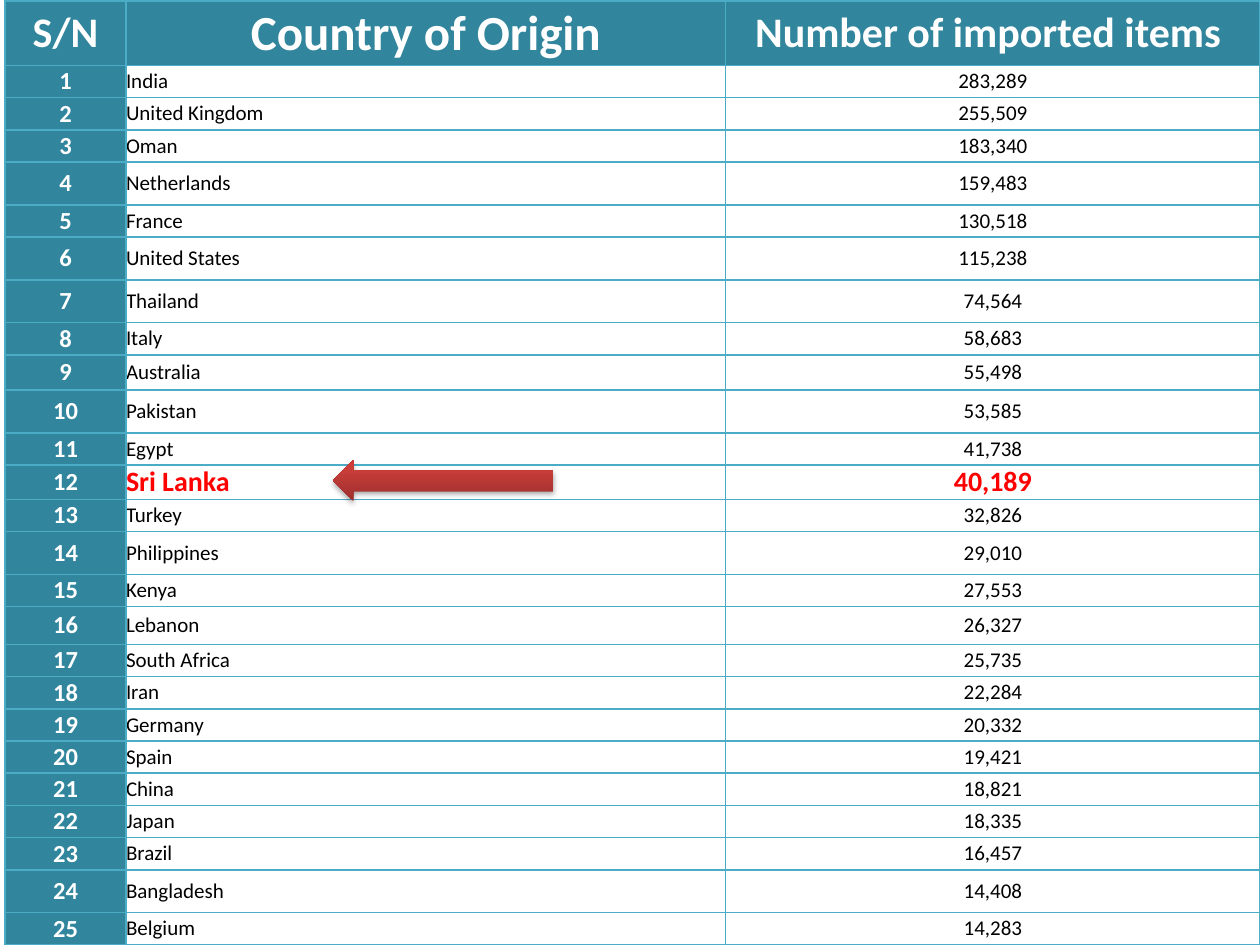
import copy

import lxml.etree
import pptx
import pptx.dml.color
import pptx.enum.dml
import pptx.enum.shapes
import pptx.enum.text
import pptx.oxml
import pptx.oxml.ns
import pptx.util

COLORS = {
    "header": "31859C",
    "border": "4BACC6",
    "light": "FFFFFF",
    "text": "000000",
    "highlight": "FF0000",
    "arrow_dark": "9C2F2D",
    "arrow_mid": "CB3E3A",
    "arrow_light": "CE3B37",
}
NAMESPACE = pptx.oxml.ns.nsdecls("a")
CENTER = pptx.enum.text.PP_ALIGN.CENTER
LEFT = pptx.enum.text.PP_ALIGN.LEFT

headings = ["S/N", "Country of Origin", "Number of imported items "]
heading_sizes = [24, 28, 24]
imports = [
    ("India", 283289), ("United Kingdom", 255509), ("Oman", 183340),
    ("Netherlands", 159483), ("France", 130518), ("United States", 115238),
    ("Thailand", 74564), ("Italy", 58683), ("Australia", 55498),
    ("Pakistan", 53585), ("Egypt", 41738), ("Sri Lanka", 40189),
    ("Turkey", 32826), ("Philippines", 29010), ("Kenya", 27553),
    ("Lebanon", 26327), ("South Africa", 25735), ("Iran", 22284),
    ("Germany", 20332), ("Spain", 19421), ("China", 18821),
    ("Japan", 18335), ("Brazil", 16457), ("Bangladesh", 14408),
    ("Belgium", 14283),
]
highlighted = "Sri Lanka"
slide_width, slide_height = 10, 7.5
table_left, table_top = 0.04, 0.01
table_height = slide_height - table_top
column_widths = [0.96, 4.76, 4.24]
row_count = len(imports) + 1
special_heights = {0: 0.51, 9: 0.28, 12: 0.27, 16: 0.3}
special_heights.update(dict.fromkeys([4, 6, 7, 10, 14, 24], 0.34))
plain_height = (table_height - sum(special_heights.values())) / (row_count - len(special_heights))
row_heights = [special_heights.get(index, plain_height) for index in range(row_count)]

deck = pptx.Presentation()
deck.slide_width = pptx.util.Inches(slide_width)
deck.slide_height = pptx.util.Inches(slide_height)
page = deck.slides.add_slide(deck.slide_layouts[6])

frame = page.shapes.add_table(
    row_count, len(column_widths),
    pptx.util.Inches(table_left), pptx.util.Inches(table_top),
    pptx.util.Inches(sum(column_widths)), pptx.util.Inches(table_height),
)
table = frame.table
table.horz_banding = False
for column, width in zip(table.columns, column_widths):
    column.width = pptx.util.Inches(width)
for row, height in zip(table.rows, row_heights):
    row.height = pptx.util.Inches(height)

cell_format = {
    "margin_left": 0, "margin_right": 0, "margin_top": 0, "margin_bottom": 0,
    "vertical_anchor": pptx.enum.text.MSO_ANCHOR.MIDDLE,
}
serial_font = {"size": 14, "bold": True, "color": "light"}
body_font = {"size": 12, "bold": False, "color": "text"}
highlight_font = {"size": 16, "bold": True, "color": "highlight"}

records = [headings]
for number, (country, items) in enumerate(imports, 1):
    records.append([str(number), country, f"{items:,}"])

for row_index, record in enumerate(records):
    for column_index, text in enumerate(record):
        cell = table.cell(row_index, column_index)
        for name, value in cell_format.items():
            setattr(cell, name, value)
        for side in ("lnL", "lnR", "lnT", "lnB"):
            cell._tc.get_or_add_tcPr().append(pptx.oxml.parse_xml(
                f'<a:{side} {NAMESPACE} w="12700"><a:solidFill>'
                f'<a:srgbClr val="{COLORS["border"]}"/></a:solidFill></a:{side}>'
            ))
        if row_index == 0 or column_index == 0:
            cell.fill.solid()
            cell.fill.fore_color.rgb = pptx.dml.color.RGBColor.from_string(COLORS["header"])
        else:
            cell.fill.background()

        if row_index == 0:
            style = dict(serial_font, size=heading_sizes[column_index])
        elif column_index == 0:
            style = serial_font
        elif record[1] == highlighted:
            style = highlight_font
        else:
            style = body_font
        para = cell.text_frame.paragraphs[0]
        para.alignment = LEFT if column_index == 1 and row_index else CENTER
        span = para.add_run()
        span.text = text
        font_format = {
            "name": "Calibri",
            "size": pptx.util.Pt(style["size"]),
            "bold": style["bold"],
        }
        for name, value in font_format.items():
            setattr(span.font, name, value)
        span.font.color.rgb = pptx.dml.color.RGBColor.from_string(COLORS[style["color"]])

arrow = page.shapes.add_shape(
    pptx.enum.shapes.MSO_SHAPE.LEFT_ARROW,
    pptx.util.Inches(2.64), pptx.util.Inches(3.65),
    pptx.util.Inches(1.75), pptx.util.Inches(0.33),
)
arrow.line.fill.background()
arrow.fill.gradient()
arrow.fill.gradient_angle = 90
stop_list = arrow._element.spPr.find(".//" + pptx.oxml.ns.qn("a:gsLst"))
stop_list.append(copy.deepcopy(stop_list[-1]))
arrow_stops = [(0, "arrow_dark"), (0.8, "arrow_mid"), (1, "arrow_light")]
for stop, (position, color) in zip(arrow.fill.gradient_stops, arrow_stops):
    stop.position = position
    stop.color.rgb = pptx.dml.color.RGBColor.from_string(COLORS[color])

arrow.shadow.inherit = False
effects = arrow._element.spPr.find(pptx.oxml.ns.qn("a:effectLst"))
effects.append(pptx.oxml.parse_xml(
    f'<a:outerShdw {NAMESPACE} blurRad="{pptx.util.Pt(3.1)}" dist="{pptx.util.Pt(1.8)}" '
    f'dir="5400000" rotWithShape="0"><a:srgbClr val="{COLORS["text"]}">'
    '<a:alpha val="35000"/></a:srgbClr></a:outerShdw>'
))

deck.save("out.pptx")
